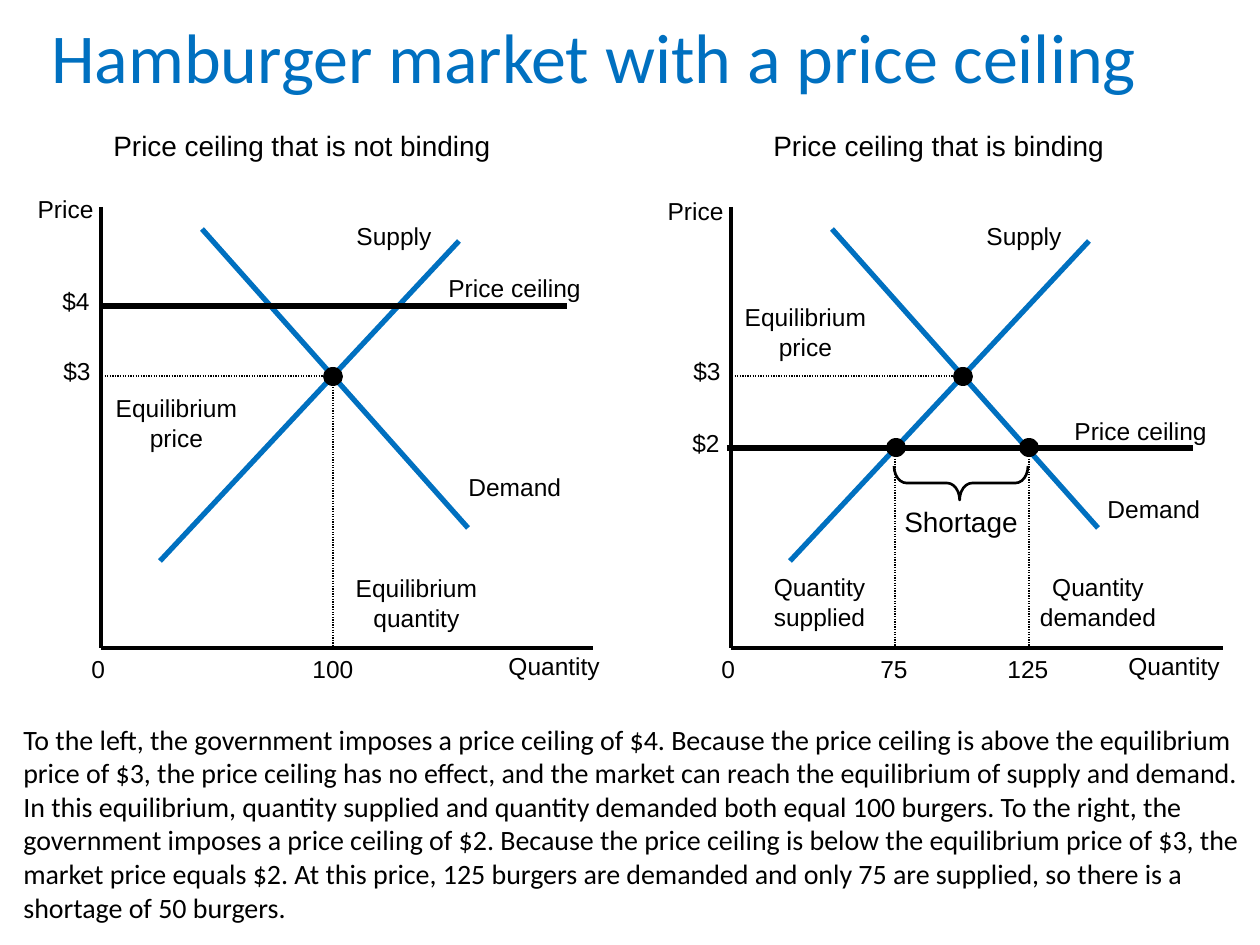
from pptx import Presentation
from pptx.dml.color import RGBColor
from pptx.enum.dml import MSO_LINE
from pptx.enum.shapes import MSO_CONNECTOR, MSO_SHAPE
from pptx.enum.text import MSO_AUTO_SIZE, PP_ALIGN
from pptx.util import Pt
from lxml.etree import SubElement

PX = 914400 / 126
HUES = {name: RGBColor.from_string(code) for name, code in {
    "ink": "000000", "blue": "0070C0", "white": "FFFFFF"}.items()}
SIDES = {"l": PP_ALIGN.LEFT, "c": PP_ALIGN.CENTER, "r": PP_ALIGN.RIGHT}
DRAW = "{http://schemas.openxmlformats.org/drawingml/2006/main}"

deck = Presentation()
deck.slide_width = round(1260 * PX)
deck.slide_height = round(945 * PX)
slide = deck.slides.add_slide(deck.slide_layouts[6])
shapes = slide.shapes


def text(words, x, y, w, h=43, size=14, font="Arial", hue="ink", side="l", wrap=False, grow=True):
    box = shapes.add_textbox(*[round(n * PX) for n in (x, y, w, h)])
    frame = box.text_frame
    frame.word_wrap = wrap
    frame.auto_size = MSO_AUTO_SIZE.SHAPE_TO_FIT_TEXT if grow else MSO_AUTO_SIZE.NONE
    for i, part in enumerate(words.split("\n")):
        para = frame.add_paragraph() if i else frame.paragraphs[0]
        para.alignment = SIDES[side]
        run = para.add_run()
        run.text = part
        run.font.size = Pt(size)
        run.font.name = font
        run.font.color.rgb = HUES[hue]


def line(x1, y1, x2, y2, width, hue="ink", dots=False):
    rule = shapes.add_connector(
        MSO_CONNECTOR.STRAIGHT, *[round(n * PX) for n in (x1, y1, x2, y2)])
    rule.line.width = Pt(width)
    rule.line.color.rgb = HUES[hue]
    if dots:
        rule.line.dash_style = MSO_LINE.ROUND_DOT
    SubElement(rule._element.spPr, DRAW + "effectLst")


text("Hamburger market with a price ceiling", 39, 7, 1218, 73,
     size=40, font="Calibri", hue="blue", wrap=True, grow=False)

panels = [
    {"left": 101, "price": 188, "cap": ("Price ceiling that is not binding", 101, 407),
     "cost": "$4", "level": 306, "start": 101, "tag": (436, 267), "want": (456, 466),
     "axis": (496, 117), "drops": [("100", 333, 382, 300, 67)], "dots": [(333, 376)],
     "notes": [("Equilibrium\nprice", 103, 387, 147),
               ("Equilibrium\nquantity", 341, 567, 151)]},
    {"left": 731, "price": 190, "cap": ("Price ceiling that is binding", 761, 369),
     "cost": "$2", "level": 448, "start": 727, "tag": (1062, 410), "want": (1095, 488),
     "axis": (1116, 125),
     "drops": [("75", 895, 451, 868, 53), ("125", 1029, 451, 995, 67)],
     "dots": [(963, 376), (896, 447), (1029, 447)],
     "notes": [("Equilibrium\nprice", 732, 296, 147),
               ("Quantity\nsupplied", 761, 566, 117),
               ("Quantity\ndemanded", 1027, 566, 142)]},
]

for panel in panels:
    left = panel["left"]
    level = panel["level"]
    plot = shapes.add_shape(
        MSO_SHAPE.RECTANGLE, *[round(n * PX) for n in (left, 218, 487, 430)])
    plot.shadow.inherit = False
    plot.fill.solid()
    plot.fill.fore_color.rgb = HUES["white"]
    plot.line.color.rgb = HUES["white"]
    plot.line.width = Pt(2)

    line(left, 207, left, 648, 2.25)
    line(left, 648, left + 492, 648, 2.25)
    line(left + 101, 229, left + 367, 528, 3, "blue")
    line(left + 59, 561, left + 358, 241, 3, "blue")
    line(left + 1, 376, left + 232, 376, 0.75, dots=True)
    for amount, x, y, edge, wide in panel["drops"]:
        line(x, y, x, 648, 0.75, dots=True)
        text(amount, edge, 648, wide)
    line(panel["start"], level, panel["start"] + 466, level, 3)

    for x, y in panel["dots"]:
        dot = shapes.add_shape(
            MSO_SHAPE.OVAL, *[round(n * PX) for n in (x - 10, y - 9, 20, 19)])
        dot.shadow.inherit = False
        dot.fill.solid()
        dot.fill.fore_color.rgb = HUES["ink"]
        dot.line.fill.background()

    cap, edge, wide = panel["cap"]
    text(cap, edge, 122, wide, 47, size=16)
    text("Price", left - 77, panel["price"], 82, side="r")
    text("Quantity", panel["axis"][0], 645, panel["axis"][1])
    text("0", left - 22, 648, 39)
    text("Supply", left + 243, 215, 108)
    text("Demand", *panel["want"], 118)
    text("$3", left - 50, 350, 53)
    text(panel["cost"], left - 51, level - 26, 53)
    text("Price ceiling", *panel["tag"], 159)
    for words, x, y, wide in panel["notes"]:
        text(words, x, y, wide, 72, side="c")

text("Shortage", 890, 498, 142, 47, size=16, side="c", wrap=True)
brace = shapes.add_shape(
    MSO_SHAPE.LEFT_BRACE, *[round(n * PX) for n in (944, 416, 34, 134)])
brace.shadow.inherit = False
brace.rotation = 270
brace.adjustments[0] = 0.37
brace.adjustments[1] = 0.49
brace.fill.background()
brace.line.color.rgb = HUES["ink"]
brace.line.width = Pt(1.5)

text("To the left, the government imposes a price ceiling of $4. Because the price ceiling "
     "is above the equilibrium price of $3, the price ceiling has no effect, and the market "
     "can reach the equilibrium of supply and demand. In this equilibrium, quantity supplied "
     "and quantity demanded both equal 100 burgers. To the right, the government imposes a "
     "price ceiling of $2. Because the price ceiling is below the equilibrium price of $3, "
     "the market price equals $2. At this price, 125 burgers are demanded and only 75 are "
     "supplied, so there is a shortage of 50 burgers.",
     11, 716, 1260, 217, size=16, font="Calibri", wrap=True)

deck.save("out.pptx")
